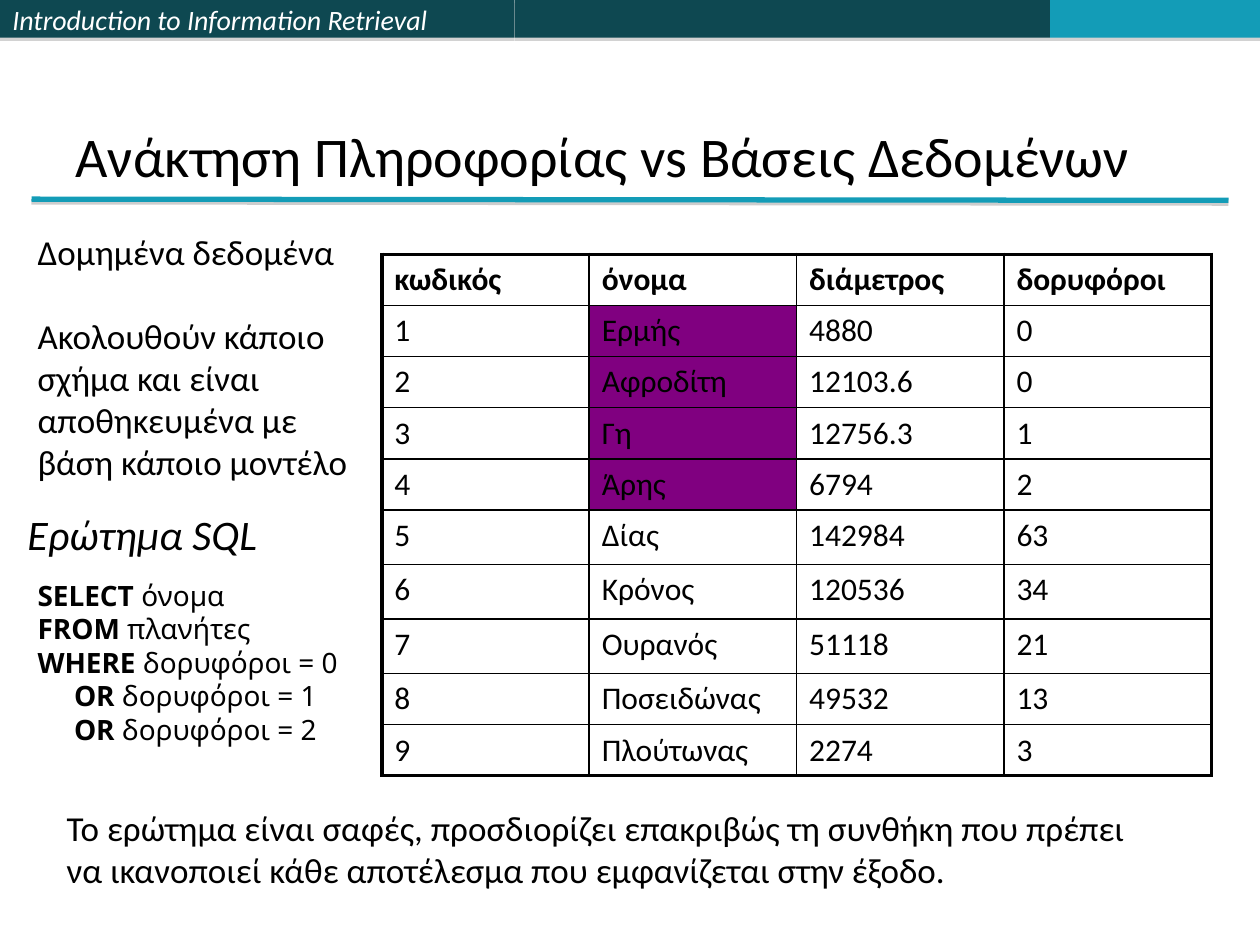
import pptx
import pptx.util
import pptx.dml.color
import pptx.enum.shapes
import pptx.enum.text
import pptx.oxml
import pptx.oxml.ns

Pt = pptx.util.Pt
RGBColor = pptx.dml.color.RGBColor
ANCHOR = pptx.enum.text.MSO_ANCHOR

BLACK = RGBColor(0, 0, 0)
WHITE = RGBColor(255, 255, 255)
DARK_TEAL = RGBColor(0x0E, 0x48, 0x51)
TEAL = RGBColor(0x13, 0x9C, 0xB7)
PURPLE = RGBColor(0x80, 0, 0x80)
BODY_FONT = "Calibri"
QUERY_FONT = "Noto Sans"

COURSE = "Introduction to Information Retrieval"
TITLE = "Ανάκτηση Πληροφορίας vs Βάσεις Δεδομένων"
HEADER_BARS = [(294, DARK_TEAL, COURSE), (306, DARK_TEAL, ""), (120, TEAL, "")]
PLANETS = [
    ("κωδικός", "όνομα", "διάμετρος", "δορυφόροι"),
    ("1", "Ερμής", "4880", "0"),
    ("2", "Αφροδίτη", "12103.6", "0"),
    ("3", "Γη", "12756.3", "1"),
    ("4", "Άρης", "6794", "2"),
    ("5", "Δίας", "142984", "63"),
    ("6", "Κρόνος", "120536", "34"),
    ("7", "Ουρανός", "51118", "21"),
    ("8", "Ποσειδώνας", "49532", "13"),
    ("9", "Πλούτωνας", "2274", "3"),
]
MATCHING_ROWS = range(1, 5)
TALL_ROWS = range(5, 8)
NAME_COLUMN = 1
QUERY = [
    ("SELECT", " όνομα", 0),
    ("FROM", " πλανήτες", 0),
    ("WHERE", " δορυφόροι = 0", 0),
    ("OR", " δορυφόροι = 1", 20.8),
    ("OR", " δορυφόροι = 2", 20.8),
]
STRUCTURED = [
    "Δομημένα δεδομένα",
    "Ακολουθούν κάποιο σχήμα και είναι αποθηκευμένα με βάση κάποιο μοντέλο",
]
CONCLUSION = [
    "Το ερώτημα είναι σαφές, προσδιορίζει επακριβώς τη συνθήκη που πρέπει",
    "να ικανοποιεί κάθε αποτέλεσμα που εμφανίζεται στην έξοδο.",
]


def style(run, size, color=BLACK, font=BODY_FONT, bold=False, italic=False):
    run.font.size = Pt(size)
    run.font.name = font
    run.font.color.rgb = color
    run.font.bold = bold
    run.font.italic = italic


def style_all(text_frame, size, **options):
    for paragraph in text_frame.paragraphs:
        for run in paragraph.runs:
            style(run, size, **options)


def add_shadow(shape, distance, opacity):
    shape._element.spPr.append(pptx.oxml.parse_xml(
        f'<a:effectLst {pptx.oxml.ns.nsdecls("a")}>'
        f'<a:outerShdw dist="{Pt(distance)}" dir="5400000" rotWithShape="0">'
        f'<a:srgbClr val="808080"><a:alpha val="{opacity * 1000}"/></a:srgbClr>'
        '</a:outerShdw></a:effectLst>'))


def add_text(slide, left, top, width, height, lines, size, **options):
    box = slide.shapes.add_textbox(Pt(left), Pt(top), Pt(width), Pt(height))
    box.text_frame.word_wrap = True
    box.text_frame.text = "\n".join(lines)
    style_all(box.text_frame, size, **options)
    return box.text_frame


def add_header(slide):
    left = 0
    for width, color, text in HEADER_BARS:
        bar = slide.shapes.add_shape(pptx.enum.shapes.MSO_SHAPE.RECTANGLE,
                                     Pt(left), 0, Pt(width), Pt(21.6))
        bar.fill.solid()
        bar.fill.fore_color.rgb = color
        bar.line.fill.background()
        add_shadow(bar, 1.8, 35)
        if text:
            bar.text_frame.text = text
            bar.text_frame.vertical_anchor = ANCHOR.MIDDLE
            bar.text_frame.paragraphs[0].alignment = pptx.enum.text.PP_ALIGN.LEFT
            style_all(bar.text_frame, 16, color=WHITE, italic=True)
        left += width


def add_title(slide):
    title = slide.shapes.title
    title.left, title.top, title.width, title.height = Pt(36), Pt(21.6), Pt(648), Pt(90)
    title.text_frame.text = TITLE
    title.text_frame.vertical_anchor = ANCHOR.BOTTOM
    title.text_frame.paragraphs[0].alignment = pptx.enum.text.PP_ALIGN.LEFT
    style_all(title.text_frame, 32)
    rule = slide.shapes.add_connector(pptx.enum.shapes.MSO_CONNECTOR.STRAIGHT,
                                      Pt(18), Pt(113.8), Pt(702), Pt(114.5))
    rule.line.color.rgb = TEAL
    rule.line.width = Pt(3)
    add_shadow(rule, 1.6, 38)


def set_borders(cell, outer_sides):
    properties = cell._tc.get_or_add_tcPr()
    for side in "LRTB":
        width = 2.25 if side in outer_sides else 1
        properties.append(pptx.oxml.parse_xml(
            f'<a:ln{side} {pptx.oxml.ns.nsdecls("a")} w="{Pt(width)}">'
            f'<a:solidFill><a:srgbClr val="{BLACK}"/></a:solidFill></a:ln{side}>'))


def add_planets(slide):
    row_count, column_count = len(PLANETS), len(PLANETS[0])
    table = slide.shapes.add_table(row_count, column_count, Pt(218.2), Pt(145.4),
                                   Pt(474), Pt(298)).table
    table.first_row = False
    table.horz_banding = False
    for column in table.columns:
        column.width = Pt(118.5)
    for row_index, values in enumerate(PLANETS):
        table.rows[row_index].height = Pt(31.2 if row_index in TALL_ROWS else 29.2)
        for column_index, value in enumerate(values):
            cell = table.cell(row_index, column_index)
            cell.text_frame.text = value
            style_all(cell.text_frame, 18, bold=row_index == 0)
            edges = {"L": column_index == 0, "R": column_index == column_count - 1,
                     "T": row_index == 0, "B": row_index == row_count - 1}
            set_borders(cell, [side for side, outer in edges.items() if outer])
            if row_index in MATCHING_ROWS and column_index == NAME_COLUMN:
                cell.fill.solid()
                cell.fill.fore_color.rgb = PURPLE
            else:
                cell.fill.background()


def add_query(slide):
    text_frame = add_text(slide, 14.4, 326.9, 198, 104.4, [""] * len(QUERY), 16)
    for paragraph, (keyword, rest, indent) in zip(text_frame.paragraphs, QUERY):
        paragraph._p.get_or_add_pPr().set("marL", str(Pt(indent)))
        for text, bold in ((keyword, True), (rest, False)):
            run = paragraph.add_run()
            run.text = text
            style(run, 16, font=QUERY_FONT, bold=bold)


def main():
    presentation = pptx.Presentation()
    presentation.slide_width, presentation.slide_height = Pt(720), Pt(540)
    slide = presentation.slides.add_slide(presentation.slide_layouts[5])
    add_header(slide)
    add_title(slide)
    add_planets(slide)
    add_query(slide)
    add_text(slide, 31, 457.2, 628.6, 55.4, CONCLUSION, 20)
    add_text(slide, 8.6, 287.3, 148.3, 36, ["Ερώτημα SQL"], 24, italic=True)
    structured = add_text(slide, 14.4, 128.2, 193, 152.6, STRUCTURED, 20)
    structured.paragraphs[1].space_before = Pt(24)
    presentation.save("out.pptx")


if __name__ == "__main__":
    main()
